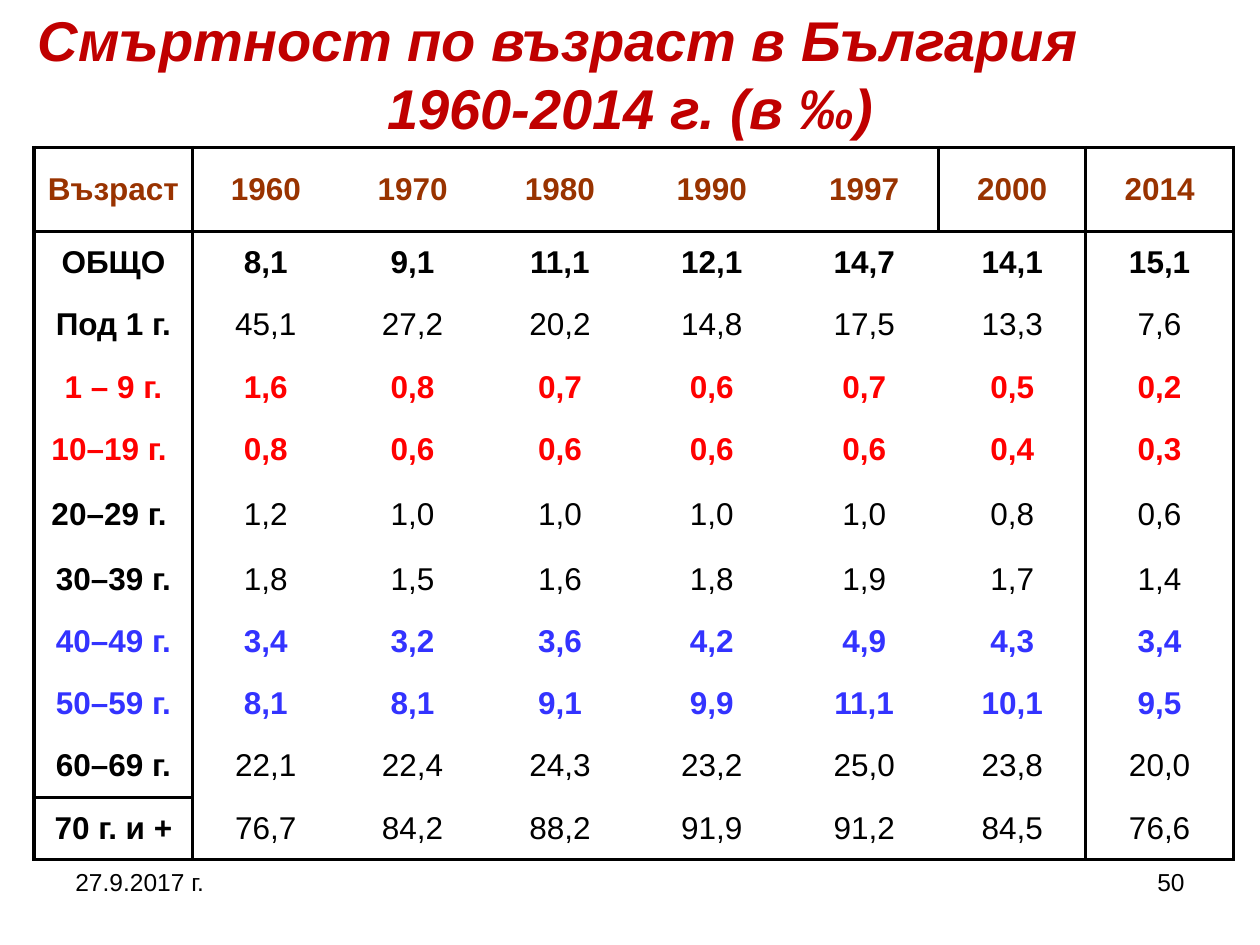
from dataclasses import dataclass

from lxml.etree import SubElement
from pptx import Presentation
from pptx.dml.color import RGBColor as RGB
from pptx.enum.text import MSO_ANCHOR as ANCHOR, MSO_AUTO_SIZE as FIT, PP_ALIGN as ALIGN
from pptx.oxml.ns import qn
from pptx.util import Inches, Pt


@dataclass(frozen=True)
class Theme:
    """Font, colours and type sizes of the slide."""

    font: str = "Arial"
    title: str = "C00000"
    head: str = "993300"
    ink: str = "000000"
    low: str = "FF0000"
    mid: str = "3333FF"
    big: int = 32
    cell: int = 18
    small: int = 14
    line: int = 2


THEME = Theme()
TITLE = ["Смъртност по възраст в България", "1960-2014 г. (в ‰)"]
WIDTHS = [1.26, 1.16, 1.17, 1.17, 1.24, 1.18, 1.17, 1.17]
HEIGHT, TOP_ROW, TALL_ROW = 5.65, 0.67, 0.54
TALL = 5
ROWS = [
    ("Възраст", "1960 1970 1980 1990 1997 2000 2014", THEME.head, True),
    ("ОБЩО", "8,1 9,1 11,1 12,1 14,7 14,1 15,1", THEME.ink, True),
    ("Под 1 г.", "45,1 27,2 20,2 14,8 17,5 13,3 7,6", THEME.ink, False),
    ("1 – 9 г.", "1,6 0,8 0,7 0,6 0,7 0,5 0,2", THEME.low, True),
    ("10–19 г. ", "0,8 0,6 0,6 0,6 0,6 0,4 0,3", THEME.low, True),
    ("20–29 г. ", "1,2 1,0 1,0 1,0 1,0 0,8 0,6", THEME.ink, False),
    ("30–39 г.", "1,8 1,5 1,6 1,8 1,9 1,7 1,4", THEME.ink, False),
    ("40–49 г.", "3,4 3,2 3,6 4,2 4,9 4,3 3,4", THEME.mid, True),
    ("50–59 г.", "8,1 8,1 9,1 9,9 11,1 10,1 9,5", THEME.mid, True),
    ("60–69 г.", "22,1 22,4 24,3 23,2 25,0 23,8 20,0", THEME.ink, False),
    ("70 г. и +", "76,7 84,2 88,2 91,9 91,2 84,5 76,6", THEME.ink, False),
]
LAST = len(ROWS) - 1


def style(para, size, color, align, bold=False, italic=False):
    """Set the font and alignment of a paragraph."""
    para.alignment = align
    font = para.font
    font.name, font.size = THEME.font, Pt(size)
    font.bold, font.italic = bold, italic
    font.color.rgb = RGB.from_string(color)


def add_title(slide):
    """Fill and place the title."""
    shape = slide.shapes.title
    shape.left, shape.top = Inches(0.2), Inches(-0.01)
    shape.width, shape.height = Inches(9.61), Inches(1.18)
    frame = shape.text_frame
    frame.text = "\n".join(TITLE)
    frame.word_wrap = True
    frame.auto_size = FIT.SHAPE_TO_FIT_TEXT
    frame.vertical_anchor = ANCHOR.MIDDLE
    for para, align in zip(frame.paragraphs, (ALIGN.LEFT, ALIGN.CENTER)):
        style(para, THEME.big, THEME.title, align, True, True)


def add_note(slide, left, text, align):
    """Add a small text at the foot of the slide."""
    box = slide.shapes.add_textbox(Inches(left), Inches(6.83), Inches(2.33), Inches(0.52))
    frame = box.text_frame
    frame.word_wrap = True
    frame.text = text
    style(frame.paragraphs[0], THEME.small, THEME.ink, align)


def upright(row, edge):
    """Tell whether a vertical rule runs at this column edge."""
    return edge in (0, 1, 7, 8) or (row == 0 and edge == 6)


def level(edge, col):
    """Tell whether a horizontal rule runs at this row edge."""
    return edge in (0, 1, LAST + 1) or (edge == LAST and col == 0)


def set_lines(cell, row, col):
    """Draw the rules on the four sides of a cell."""
    sides = {
        "a:lnL": upright(row, col),
        "a:lnR": upright(row, col + 1),
        "a:lnT": level(row, col),
        "a:lnB": level(row + 1, col),
    }
    props = cell._tc.get_or_add_tcPr()
    for spot, (tag, shown) in enumerate(sides.items()):
        line = SubElement(props, qn(tag), w=str(Pt(THEME.line)))
        props.insert(spot, line)
        if shown:
            fill = SubElement(line, qn("a:solidFill"))
            SubElement(fill, qn("a:srgbClr"), val=THEME.ink)
        else:
            SubElement(line, qn("a:noFill"))


def add_grid(slide):
    """Add the table of death rates by age."""
    table = slide.shapes.add_table(
        len(ROWS), len(WIDTHS), Inches(0.27), Inches(1.17), Inches(sum(WIDTHS)), Inches(HEIGHT)
    ).table
    table.first_row = table.horz_banding = False
    for col, width in enumerate(WIDTHS):
        table.columns[col].width = Inches(width)
    plain = (HEIGHT - TOP_ROW - TALL_ROW) / (len(ROWS) - 2)
    for row, (name, rates, color, bold) in enumerate(ROWS):
        table.rows[row].height = Inches({0: TOP_ROW, TALL: TALL_ROW}.get(row, plain))
        for col, text in enumerate([name, *rates.split()]):
            cell = table.cell(row, col)
            cell.text = text
            cell.vertical_anchor = ANCHOR.MIDDLE
            cell.fill.background()
            para = cell.text_frame.paragraphs[0]
            style(para, THEME.cell, color, ALIGN.CENTER, bold or col == 0)
            set_lines(cell, row, col)


def main():
    """Build and save the slide."""
    deck = Presentation()
    deck.slide_width, deck.slide_height = Inches(10), Inches(7.5)
    slide = deck.slides.add_slide(deck.slide_layouts[5])
    add_note(slide, 7.17, "50", ALIGN.RIGHT)
    add_grid(slide)
    add_title(slide)
    add_note(slide, 0.5, "27.9.2017 г.", ALIGN.LEFT)
    deck.save("out.pptx")


if __name__ == "__main__":
    main()
